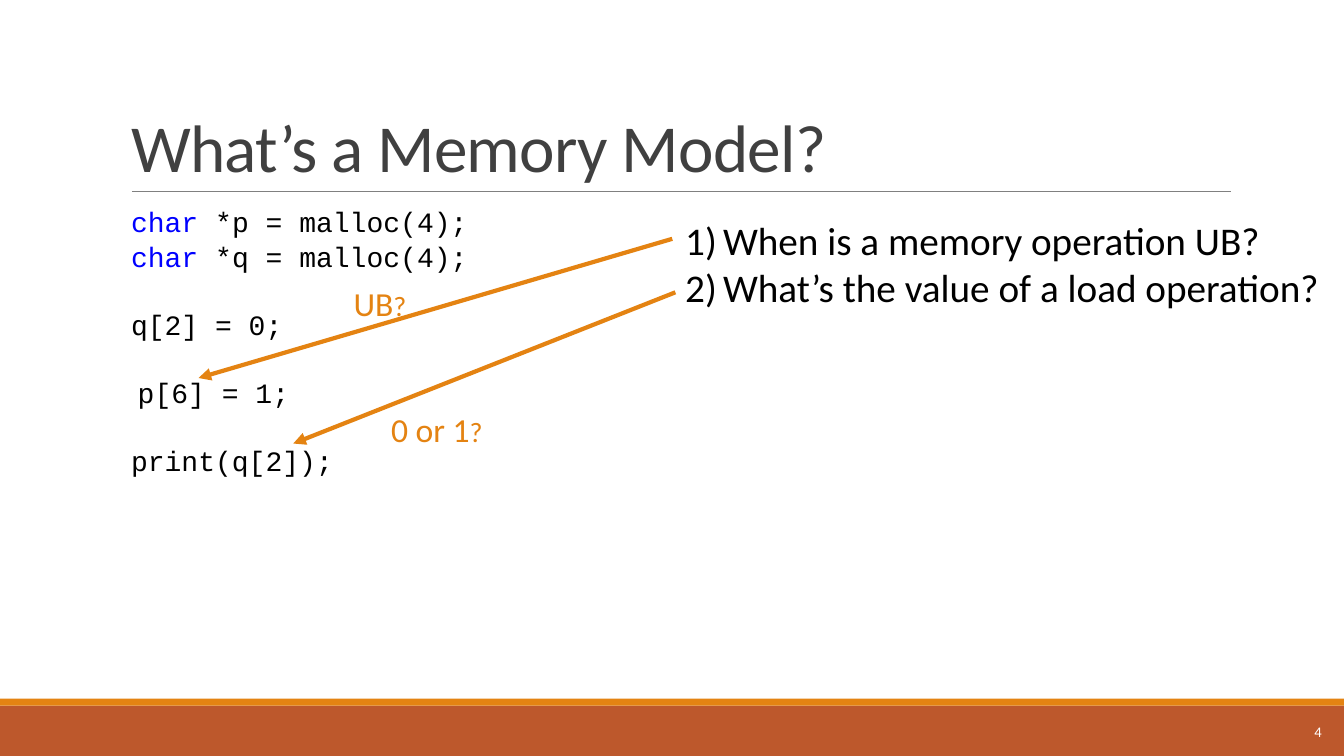
"""Build the memory model slide, with all lengths in points."""
from lxml import etree
from pptx import Presentation, util as u
from pptx.dml import color
from pptx.enum import shapes, text
from pptx.oxml import ns

ORANGE, RUST, BLACK, BLUE = "E48312", "BD582C", "000000", "0000FF"


def rgb(value):
    return color.RGBColor.from_string(value)


def child(parent, tag, **attributes):
    return etree.SubElement(parent, ns.qn(tag), attributes)


class SlideBuilder:
    def __init__(self, deck):
        self.font = "Calibri"
        self.code_font = "Courier New"
        self.page = deck.slides.add_slide(deck.slide_layouts[1])

    def place(self, shape, left, top, width, height):
        shape.left, shape.top = u.Pt(left), u.Pt(top)
        shape.width, shape.height = u.Pt(width), u.Pt(height)

    def style(self, font, size, fill, name=None):
        font.name, font.size = name or self.font, u.Pt(size)
        font.color.rgb = rgb(fill)

    def band(self, top, height, fill):
        box = self.page.shapes.add_shape(
            shapes.MSO_SHAPE.RECTANGLE, 0, u.Pt(top), u.Pt(960), u.Pt(height))
        box.shadow.inherit = False
        box.fill.solid()
        box.fill.fore_color.rgb = rgb(fill)
        box.line.fill.background()

    def line(self, start, end, stroke, weight, arrow=False):
        link = self.page.shapes.add_connector(
            shapes.MSO_CONNECTOR.STRAIGHT, *map(u.Pt, start + end))
        link.line.color.rgb = rgb(stroke)
        link.line.width = u.Pt(weight)
        if arrow:
            child(link.line._get_or_add_ln(), "a:tailEnd", type="triangle")
        child(link._element.spPr, "a:effectLst")

    def title(self, words):
        box = self.page.shapes.title
        self.place(box, 86.4, 22.3, 792, 114.5)
        frame = box.text_frame
        frame.auto_size = text.MSO_AUTO_SIZE.NONE
        frame.vertical_anchor = text.MSO_ANCHOR.BOTTOM
        para = frame.paragraphs[0]
        para.alignment, para.line_spacing = text.PP_ALIGN.LEFT, 0.85
        span = para.add_run()
        span.text = words
        self.style(span.font, 48, "404040")
        span.font._element.set("spc", "-50")

    def code(self, lines):
        box = self.page.placeholders[1]
        self.place(box, 86.4, 145.4, 326.2, 292.3)
        frame = box.text_frame
        frame.auto_size = text.MSO_AUTO_SIZE.NONE
        frame.margin_left = frame.margin_right = 0
        for index, (keyword, rest, indent, gap) in enumerate(lines):
            para = frame.add_paragraph() if index else frame.paragraphs[0]
            para.line_spacing = 0.9
            para.space_before, para.space_after = u.Pt(gap), u.Pt(2)
            properties = para._p.get_or_add_pPr()
            properties.set("marL", str(u.Pt(indent)))
            properties.set("indent", "0")
            child(properties, "a:buNone")
            for words, fill in ((keyword, BLUE), (rest, BLACK)):
                if words:
                    span = para.add_run()
                    span.text = words
                    self.style(span.font, 20, fill, self.code_font)

    def text_box(self, left, top, width, height):
        box = self.page.shapes.add_textbox(*map(u.Pt, (left, top, width, height)))
        box.text_frame.word_wrap = False
        return box.text_frame

    def questions(self, items):
        frame = self.text_box(482.4, 151.2, 472.3, 74.9)
        for index, words in enumerate(items):
            para = frame.add_paragraph() if index else frame.paragraphs[0]
            para.text = words
            self.style(para.font, 28, BLACK)
            properties = para._p.get_or_add_pPr()
            properties.set("marL", str(u.Pt(27)))
            properties.set("indent", str(-u.Pt(27)))
            properties.insert(0, etree.Element(ns.qn("a:buAutoNum"), type="arabicParenR"))

    def answer(self, words, left, top, width):
        para = self.text_box(left, top, width, 36).paragraphs[0]
        for part, size in ((words, 24), ("?", 20)):
            span = para.add_run()
            span.text = part
            self.style(span.font, size, ORANGE)

    def number(self, words):
        frame = self.text_box(848.2, 508.3, 103, 28.8)
        frame.word_wrap = True
        frame.vertical_anchor = text.MSO_ANCHOR.MIDDLE
        para = frame.paragraphs[0]
        para.text, para.alignment = words, text.PP_ALIGN.RIGHT
        self.style(para.font, 10.5, "FFFFFF")


def main():
    deck = Presentation()
    deck.slide_width, deck.slide_height = u.Pt(960), u.Pt(540)
    slide = SlideBuilder(deck)
    slide.band(504, 36, RUST)
    slide.band(499, 5, ORANGE)
    slide.line((94.3, 136.8), (879.1, 136.8), "808080", 0.5)
    slide.title("What’s a Memory Model?")
    near, far = 1.3, 25
    slide.code([
        ("char", " *p = malloc(4);", 7.2, 0),
        ("char", " *q = malloc(4);", 7.2, near),
        ("", "q[2] = 0;", 7.2, far),
        ("", "p[6] = 1;", 12, far),
        ("", "print(q[2]);", 7.2, far),
    ])
    slide.questions(["When is a memory operation UB?",
                     "What’s the value of a load operation?"])
    slide.line((480.2, 170.6), (141.8, 270), ORANGE, 3, arrow=True)
    slide.line((482.4, 208.8), (209.5, 316.8), ORANGE, 3, arrow=True)
    slide.answer("UB", 245.5, 198.7, 52.6)
    slide.answer("0 or 1", 272.2, 288.7, 80.6)
    slide.number("4")
    deck.save("out.pptx")


if __name__ == "__main__":
    main()
